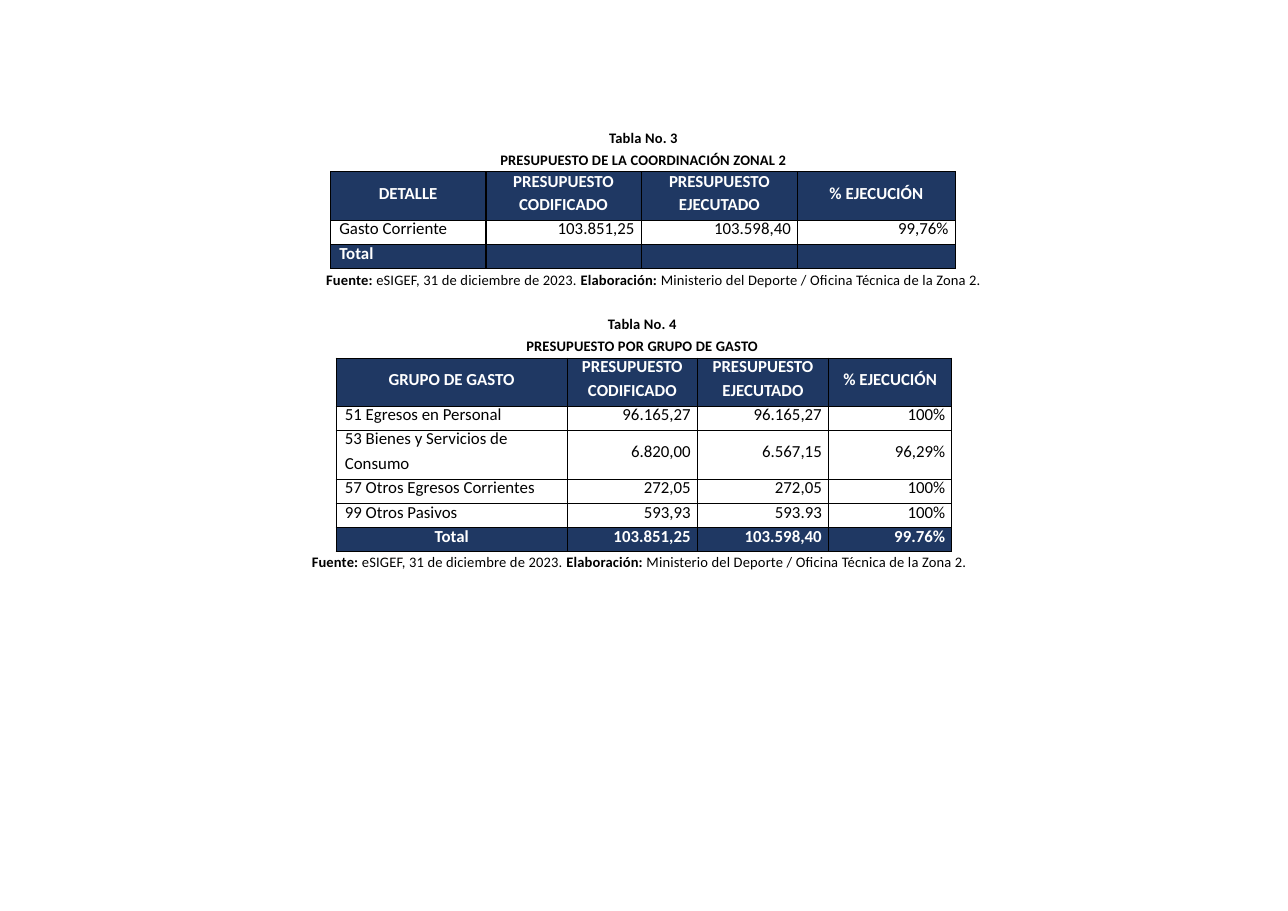
from lxml.etree import SubElement
from pptx import Presentation
from pptx.dml.color import RGBColor
from pptx.enum.text import MSO_ANCHOR as Anchor, MSO_AUTO_SIZE as AutoSize, PP_ALIGN as Align
from pptx.oxml.ns import qn
from pptx.util import Inches, Pt

ROW = 0.22
TIGHT = 12.3
LOOSE = 13.1


def colour(value):
    return RGBColor.from_string(value)


class BudgetPage:
    font = "Calibri"
    ink = "000000"
    navy = "1F3863"
    white = "FFFFFF"
    small = 9.5
    cell_size = 11

    def __init__(self, deck):
        self.page = deck.slides.add_slide(deck.slide_layouts[5])

    def style(self, span, size, shade, bold):
        span.font.name = self.font
        span.font.size = Pt(size)
        span.font.color.rgb = colour(shade)
        span.font.bold = bold

    def style_small(self, span, bold):
        self.style(span, self.small, self.ink, bold)
        span._r.get_or_add_rPr().set("spc", "10")

    def frame(self, box, left, top, width, height, inset):
        box.left, box.top = Inches(left), Inches(top)
        box.width, box.height = Inches(width), Inches(height)
        frame = box.text_frame
        frame.word_wrap = True
        frame.auto_size = AutoSize.NONE
        frame.vertical_anchor = Anchor.TOP
        frame.margin_left = frame.margin_right = frame.margin_bottom = 0
        frame.margin_top = Inches(inset)
        return frame

    def text_box(self):
        return self.page.shapes.add_textbox(0, 0, 0, 0)

    def caption(self, box, left, top, text):
        frame = self.frame(box, left, top, 3, 0.42, 0.05)
        frame.text = text
        for index, para in enumerate(frame.paragraphs):
            para.alignment = Align.CENTER
            para.line_spacing = 1.0
            para.space_before = Pt(2.9 if index else 0)
            for span in para.runs:
                self.style_small(span, True)

    def source_note(self, left, top, parts):
        frame = self.frame(self.text_box(), left, top, 6.17, 0.19, 0.02)
        para = frame.paragraphs[0]
        for index, part in enumerate(parts):
            span = para.add_run()
            span.text = part
            self.style_small(span, index % 2 == 0)

    def borders(self, cell, heavy_side):
        props = cell._tc.get_or_add_tcPr()
        for side in ("lnL", "lnR", "lnT", "lnB"):
            width = Pt(1 if side == heavy_side else 0.75)
            line = SubElement(props, qn(f"a:{side}"), w=str(width))
            fill = SubElement(line, qn("a:solidFill"))
            SubElement(fill, qn("a:srgbClr"), val=self.ink)

    def cell(self, cell, text, align, dark, tall, line, heavy_side):
        self.borders(cell, heavy_side)
        if dark:
            cell.fill.solid()
            cell.fill.fore_color.rgb = colour(self.navy)
        else:
            cell.fill.background()
        centred = align == Align.CENTER
        lowered = tall and "\n" not in text
        cell.margin_left = Inches(0 if centred else 0.08)
        cell.margin_right = Inches(0 if centred else 0.06)
        cell.margin_top = Inches(0.1 if lowered else 0)
        cell.margin_bottom = 0
        cell.vertical_anchor = Anchor.TOP
        cell.text_frame.text = text
        for index, para in enumerate(cell.text_frame.paragraphs):
            para.alignment = align
            if index:
                para.space_before = Pt(2.5 if line == TIGHT else 1.8)
            elif not lowered:
                para.line_spacing = Pt(line)
            for span in para.runs:
                self.style(span, self.cell_size, self.white if dark else self.ink, dark)
            if not text:
                SubElement(para._p, qn("a:endParaRPr"), sz=str(self.cell_size * 100))

    def table(self, left, top, widths, rows, lines, heavy_edge, total_align):
        tall_rows = [any("\n" in text for text in row) for row in rows]
        heights = [ROW * (2 if tall else 1) for tall in tall_rows]
        table = self.page.shapes.add_table(
            len(rows), len(widths), Inches(left), Inches(top),
            Inches(sum(widths)), Inches(sum(heights))).table
        table.first_row = table.horz_banding = False
        for column, width in zip(table.columns, widths):
            column.width = Inches(width)
        heavy_sides = {heavy_edge - 1: "lnR", heavy_edge: "lnL"}
        last = len(rows) - 1
        for r, row in enumerate(rows):
            table.rows[r].height = Inches(heights[r])
            for c, text in enumerate(row):
                if r == 0:
                    align = Align.CENTER
                elif c:
                    align = Align.RIGHT
                else:
                    align = total_align if r == last else Align.LEFT
                self.cell(table.cell(r, c), text, align, r in (0, last),
                          tall_rows[r], lines[r], heavy_sides.get(c))


def main():
    deck = Presentation()
    deck.slide_width, deck.slide_height = Inches(11.69), Inches(8.27)
    budget = BudgetPage(deck)
    amounts = ["PRESUPUESTO\nCODIFICADO", "PRESUPUESTO\nEJECUTADO", "% EJECUCIÓN"]
    source = ["Fuente: ", "eSIGEF, 31 de diciembre de 2023. ", "Elaboración: ",
              "Ministerio del Deporte / Oficina Técnica de la Zona 2."]

    # Zonal budget
    budget.caption(budget.page.shapes.title, 4.34, 1.12,
                   "Tabla No. 3\nPRESUPUESTO DE LA COORDINACIÓN ZONAL 2")
    budget.table(3, 1.56, [1.41, 1.41, 1.42, 1.43], [
        ["DETALLE", *amounts],
        ["Gasto Corriente", "103.851,25", "103.598,40", "99,76%"],
        ["Total", "", "", ""],
    ], [LOOSE, TIGHT, LOOSE], 1, Align.LEFT)
    budget.source_note(2.96, 2.44, source)

    # Budget by spending group
    budget.caption(budget.text_box(), 4.33, 2.81,
                   "Tabla No. 4\nPRESUPUESTO POR GRUPO DE GASTO")
    budget.table(3.05, 3.25, [2.1, 1.18, 1.19, 1.12], [
        ["GRUPO DE GASTO", *amounts],
        ["51 Egresos en Personal", "96.165,27", "96.165,27", "100%"],
        ["53 Bienes y Servicios de\nConsumo", "6.820,00", "6.567,15", "96,29%"],
        ["57 Otros Egresos Corrientes", "272,05", "272,05", "100%"],
        ["99 Otros Pasivos", "593,93", "593.93", "100%"],
        ["Total", "103.851,25", "103.598,40", "99.76%"],
    ], [TIGHT] * 4 + [LOOSE] * 2, 2, Align.CENTER)
    budget.source_note(2.83, 5, source)

    deck.save("out.pptx")


if __name__ == "__main__":
    main()
